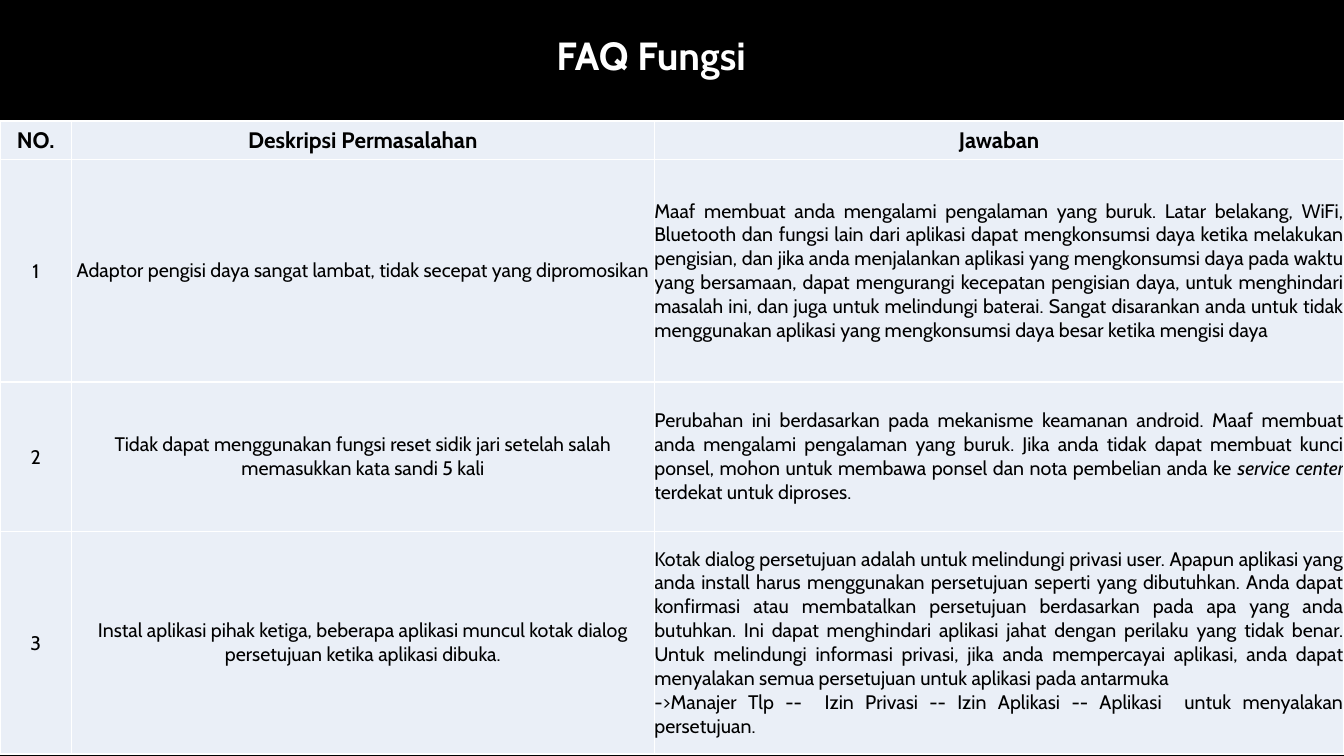
from lxml.etree import SubElement
from pptx import Presentation
from pptx.dml.color import RGBColor
from pptx.enum.text import MSO_ANCHOR, MSO_AUTO_SIZE, PP_ALIGN
from pptx.oxml.ns import qn
from pptx.util import Inches, Pt

TITLE = "FAQ Fungsi"
HEADINGS = ("NO.", "Deskripsi Permasalahan", "Jawaban")
# Each answer is a list of paragraphs; a paragraph is a list of (text, italic) runs.
FAQ = [
    ("Adaptor pengisi daya sangat lambat, tidak secepat yang dipromosikan",
     [[("Maaf membuat anda mengalami pengalaman yang buruk. Latar belakang, WiFi, "
        "Bluetooth dan fungsi lain dari aplikasi dapat mengkonsumsi daya ketika melakukan "
        "pengisian, dan jika anda menjalankan aplikasi yang mengkonsumsi daya pada waktu "
        "yang bersamaan, dapat mengurangi kecepatan pengisian daya, untuk menghindari "
        "masalah ini, dan juga untuk melindungi baterai. Sangat disarankan anda untuk tidak "
        "menggunakan aplikasi yang mengkonsumsi daya besar ketika mengisi daya", False)]]),
    ("Tidak dapat menggunakan fungsi reset sidik jari setelah salah "
     "memasukkan kata sandi 5 kali",
     [[("Perubahan ini berdasarkan pada mekanisme keamanan android. Maaf membuat "
        "anda mengalami pengalaman yang buruk. Jika anda tidak dapat membuat kunci "
        "ponsel, mohon untuk membawa ponsel dan nota pembelian anda ke ", False),
       ("service center ", True),
       ("terdekat untuk diproses.", False)]]),
    ("Instal aplikasi pihak ketiga, beberapa aplikasi muncul kotak dialog "
     "persetujuan ketika aplikasi dibuka.",
     [[("Kotak dialog persetujuan adalah untuk melindungi privasi user. Apapun aplikasi yang "
        "anda install harus menggunakan persetujuan seperti yang dibutuhkan. Anda dapat "
        "konfirmasi atau membatalkan persetujuan berdasarkan pada apa yang anda "
        "butuhkan. Ini dapat menghindari aplikasi jahat dengan perilaku yang tidak benar. "
        "Untuk melindungi informasi privasi, jika anda mempercayai aplikasi, anda dapat "
        "menyalakan semua persetujuan untuk aplikasi pada antarmuka", False)],
      [("->Manajer Tlp --  Izin Privasi -- Izin Aplikasi -- Aplikasi  untuk menyalakan "
        "persetujuan.", False)]]),
]

COLORS = {"background": "000000", "title": "FFFFFF", "text": "000000",
          "cell": "EAEFF7", "border": "FFFFFF"}
FONT = "Cabin"
SLIDE_W, SLIDE_H = 13.33, 7.5
TABLE_TOP = 0.16 * SLIDE_H
COLUMNS = (0.71, 5.78, 6.84)
ROWS = (0.38, 2.21, 1.48, 2.21)
HEADING_FONT = {"name": FONT, "size": Pt(16), "bold": True}
BODY_FONT = {"name": FONT, "size": Pt(14), "bold": False}
TITLE_FONT = {"name": FONT, "size": Pt(28), "bold": True}


def rgb(part):
    return RGBColor.from_string(COLORS[part])


def add_run(paragraph, text, style, color, italic=False):
    run = paragraph.add_run()
    run.text = text
    for attribute, value in style.items():
        setattr(run.font, attribute, value)
    run.font.italic = italic
    run.font.color.rgb = rgb(color)


def draw_borders(cell):
    """Rule all four sides; borders must precede the fill in the cell's XML."""
    properties = cell._tc.get_or_add_tcPr()
    for side in ("lnL", "lnR", "lnT", "lnB"):
        line = SubElement(properties, qn(f"a:{side}"), w=str(Pt(1)))
        fill = SubElement(line, qn("a:solidFill"))
        SubElement(fill, qn("a:srgbClr"), val=COLORS["border"])


def fill_cell(cell, paragraphs, style, align, inset):
    draw_borders(cell)
    cell.fill.solid()
    cell.fill.fore_color.rgb = rgb("cell")
    cell.vertical_anchor = MSO_ANCHOR.MIDDLE
    cell.margin_left = cell.margin_right = cell.margin_top = Inches(inset)
    cell.margin_bottom = 0
    frame = cell.text_frame
    for index, runs in enumerate(paragraphs):
        paragraph = frame.add_paragraph() if index else frame.paragraphs[0]
        paragraph.alignment = align
        for text, italic in runs:
            add_run(paragraph, text, style, "text", italic)


def add_title(slide):
    box = slide.shapes.add_textbox(Inches(5.42), Inches(0.26), Inches(2.51), Inches(0.57))
    box.text_frame.word_wrap = False
    box.text_frame.auto_size = MSO_AUTO_SIZE.SHAPE_TO_FIT_TEXT
    add_run(box.text_frame.paragraphs[0], TITLE, TITLE_FONT, "title")


def add_faq(slide):
    table = slide.shapes.add_table(
        len(ROWS), len(COLUMNS), 0, Inches(TABLE_TOP),
        Inches(sum(COLUMNS)), Inches(sum(ROWS))).table
    for column, width in zip(table.columns, COLUMNS):
        column.width = Inches(width)
    for row, height in zip(table.rows, ROWS):
        row.height = Inches(height)

    center, justify = PP_ALIGN.CENTER, PP_ALIGN.JUSTIFY
    for column, heading in enumerate(HEADINGS):
        fill_cell(table.cell(0, column), [[(heading, False)]], HEADING_FONT, center, 0.01)
    for number, (problem, answer) in enumerate(FAQ, start=1):
        fill_cell(table.cell(number, 0), [[(str(number), False)]], BODY_FONT, center, 0.01)
        fill_cell(table.cell(number, 1), [[(problem, False)]], BODY_FONT, center, 0)
        fill_cell(table.cell(number, 2), answer, BODY_FONT, justify, 0)


def main():
    deck = Presentation()
    deck.slide_width, deck.slide_height = Inches(SLIDE_W), Inches(SLIDE_H)
    slide = deck.slides.add_slide(deck.slide_layouts[6])
    slide.background.fill.solid()
    slide.background.fill.fore_color.rgb = rgb("background")
    add_title(slide)
    add_faq(slide)
    deck.save("out.pptx")


if __name__ == "__main__":
    main()
